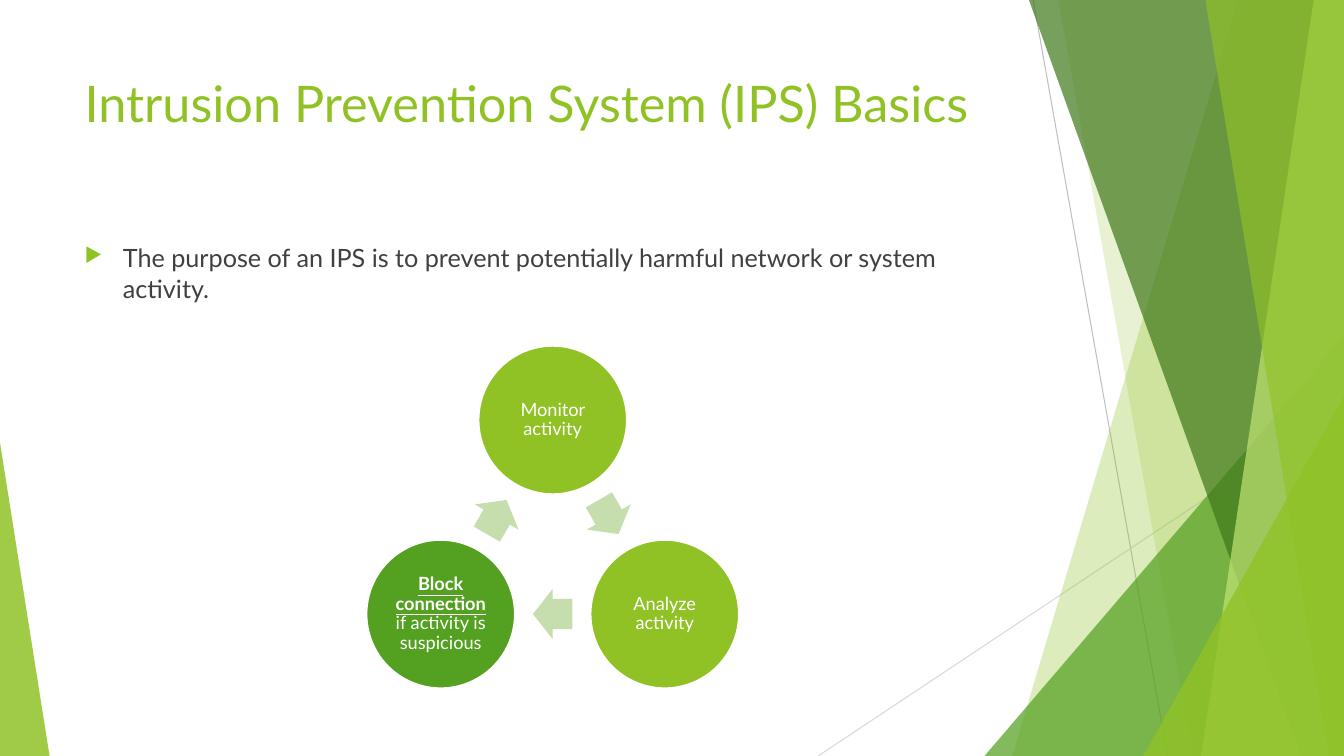
from dataclasses import dataclass
from math import cos, radians, sin

from lxml import etree
from pptx import Presentation
from pptx.dml.color import RGBColor
from pptx.enum.shapes import MSO_CONNECTOR, MSO_SHAPE
from pptx.enum.text import MSO_ANCHOR, PP_ALIGN
from pptx.oxml.ns import qn
from pptx.util import Emu, Inches, Pt

STRAIGHT = MSO_CONNECTOR.STRAIGHT
TRIANGLE = MSO_SHAPE.ISOSCELES_TRIANGLE
OVAL = MSO_SHAPE.OVAL
ARROW = MSO_SHAPE.RIGHT_ARROW
TOP = MSO_ANCHOR.TOP
MIDDLE = MSO_ANCHOR.MIDDLE
LEFT = PP_ALIGN.LEFT
CENTER = PP_ALIGN.CENTER

COLUMNS, ROWS = 16, 9
CELL = Inches(7.5) / ROWS


@dataclass(frozen=True)
class Theme:
    font: str = "Lato"
    lime: str = "90C226"
    green: str = "54A021"
    forest: str = "3F7819"
    pale_lime: str = "C0E474"
    arrow: str = "C6DDAD"
    body: str = "404040"
    white: str = "FFFFFF"
    steep_line: str = "BFBFBF"
    shallow_line: str = "D9D9D9"
    title_size: float = 36
    body_size: float = 18
    step_size: float = 13


@dataclass(frozen=True)
class Ray:
    start: tuple[float, float]
    end: tuple[float, float]
    color: str


@dataclass(frozen=True)
class Ribbon:
    top_left: float
    bottom_left: float
    color: str
    opacity: int


@dataclass(frozen=True)
class Corner:
    left: float
    top: float
    width: float
    apex: float
    color: str
    opacity: int


@dataclass(frozen=True)
class Step:
    text: str
    color: str
    emphasis: str = ""


THEME = Theme()
RAYS = [
    Ray((12.3, 0), (13.9, ROWS), THEME.steep_line),
    Ray((COLUMNS, 4.84), (9.74, ROWS), THEME.shallow_line),
]
FACETS = [
    Ribbon(14.74, 12.05, THEME.lime, 30),
    Ribbon(12.6, 14.2, THEME.lime, 20),
    Corner(11.72, 4, 4.28, 1, THEME.green, 72),
    Ribbon(12.25, 15.49, THEME.forest, 70),
    Ribbon(15.64, 14.3, THEME.pale_lime, 70),
    Ribbon(14.35, 15.82, THEME.lime, 65),
    Corner(13.61, 4.72, 2.39, 1, THEME.lime, 80),
    Corner(0, 5.27, 0.59, 0, THEME.lime, 85),
]
STEPS = [
    Step("Monitor activity", THEME.lime),
    Step("Analyze activity", THEME.lime),
    Step("if activity is suspicious", THEME.green, "Block connection "),
]
CYCLE_X, CYCLE_Y, CYCLE_RADIUS = 6.58, 6.54, 1.54
STEP_DIAMETER = 1.77
ARROW_WIDTH, ARROW_HEIGHT = 0.47, 0.6


def cells(count: float) -> Emu:
    return Emu(round(count * CELL))


def paint(shape, color: str, opacity: int = 100) -> None:
    shape.shadow.inherit = False
    shape.line.fill.background()
    shape.fill.solid()
    shape.fill.fore_color.rgb = RGBColor.from_string(color)
    if opacity < 100:
        tint = shape.fill._xPr.find(".//" + qn("a:srgbClr"))
        etree.SubElement(tint, qn("a:alpha"), val=str(opacity * 1000))


def style(paragraph, size: float, color: str, align=LEFT) -> None:
    paragraph.alignment = align
    paragraph.font.name = THEME.font
    paragraph.font.size = Pt(size)
    paragraph.font.color.rgb = RGBColor.from_string(color)


def draw_ray(slide, ray: Ray) -> None:
    line = slide.shapes.add_connector(STRAIGHT, *map(cells, ray.start + ray.end))
    line.line.color.rgb = RGBColor.from_string(ray.color)
    line.line.width = Pt(0.75)
    etree.SubElement(line._element.spPr, qn("a:effectLst"))


def draw_ribbon(slide, ribbon: Ribbon) -> None:
    outline = slide.shapes.build_freeform(cells(ribbon.top_left), 0)
    corners = [(COLUMNS, 0), (COLUMNS, ROWS), (ribbon.bottom_left, ROWS)]
    outline.add_line_segments([(cells(x), cells(y)) for x, y in corners])
    paint(outline.convert_to_shape(), ribbon.color, ribbon.opacity)


def draw_corner(slide, corner: Corner) -> None:
    box = (corner.left, corner.top, corner.width, ROWS - corner.top)
    triangle = slide.shapes.add_shape(TRIANGLE, *map(cells, box))
    triangle.adjustments[0] = corner.apex
    paint(triangle, corner.color, corner.opacity)


def draw_text(slide, text: str, top: float, height: float, size: float, color: str):
    box = slide.shapes.add_textbox(*map(cells, (0.89, top, 11.28, height)))
    box.text_frame.word_wrap = True
    box.text_frame.vertical_anchor = TOP
    paragraph = box.text_frame.paragraphs[0]
    paragraph.text = text
    style(paragraph, size, color)
    return paragraph


def add_bullet(paragraph) -> None:
    paragraph.space_before = Pt(10)
    properties = paragraph._p.get_or_add_pPr()
    properties.set("marL", str(Inches(0.38)))
    properties.set("indent", str(-Inches(0.38)))
    color = etree.Element(qn("a:buClr"))
    etree.SubElement(color, qn("a:srgbClr"), val=THEME.lime)
    size = etree.Element(qn("a:buSzPct"), val="80000")
    mark = etree.Element(qn("a:buChar"), char="▶")
    defaults = properties.find(qn("a:defRPr"))
    for part in (color, size, mark):
        defaults.addprevious(part)


def add_on_cycle(slide, kind, angle: float, radius: float, width: float, height: float):
    left = CYCLE_X + radius * cos(radians(angle)) - width / 2
    top = CYCLE_Y + radius * sin(radians(angle)) - height / 2
    return slide.shapes.add_shape(kind, *map(cells, (left, top, width, height)))


def draw_step(slide, step: Step, angle: float) -> None:
    circle = add_on_cycle(slide, OVAL, angle, CYCLE_RADIUS, STEP_DIAMETER, STEP_DIAMETER)
    paint(circle, step.color)
    circle.line.color.rgb = RGBColor.from_string(THEME.white)
    circle.line.width = Pt(1.5)
    frame = circle.text_frame
    frame.word_wrap = True
    frame.vertical_anchor = MIDDLE
    frame.margin_left = frame.margin_right = Inches(0.02)
    frame.margin_top = frame.margin_bottom = Inches(0.02)
    paragraph = frame.paragraphs[0]
    paragraph.line_spacing = 0.9
    style(paragraph, THEME.step_size, THEME.white, CENTER)
    if step.emphasis:
        action = paragraph.add_run()
        action.text = step.emphasis
        action.font.bold = action.font.underline = True
    paragraph.add_run().text = step.text


def draw_arrow(slide, angle: float) -> None:
    radius = CYCLE_RADIUS / 2
    arrow = add_on_cycle(slide, ARROW, angle, radius, ARROW_WIDTH, ARROW_HEIGHT)
    arrow.rotation = angle + 90
    arrow.adjustments[0] = 0.6
    arrow.adjustments[1] = 0.5
    paint(arrow, THEME.arrow)


def main() -> None:
    deck = Presentation()
    deck.slide_width, deck.slide_height = cells(COLUMNS), cells(ROWS)
    slide = deck.slides.add_slide(deck.slide_layouts[6])
    for ray in RAYS:
        draw_ray(slide, ray)
    for facet in FACETS:
        draw = draw_ribbon if isinstance(facet, Ribbon) else draw_corner
        draw(slide, facet)
    draw_text(slide, "Intrusion Prevention System (IPS) Basics", 0.8, 1.73,
              THEME.title_size, THEME.lime)
    purpose = draw_text(
        slide, "The purpose of an IPS is to prevent potentially harmful network or system activity.",
        2.83, 1.07, THEME.body_size, THEME.body)
    add_bullet(purpose)
    sweep = 360 / len(STEPS)
    for index, step in enumerate(STEPS):
        angle = index * sweep - 90
        draw_step(slide, step, angle)
        draw_arrow(slide, angle + sweep / 2)
    deck.save("out.pptx")


if __name__ == "__main__":
    main()
